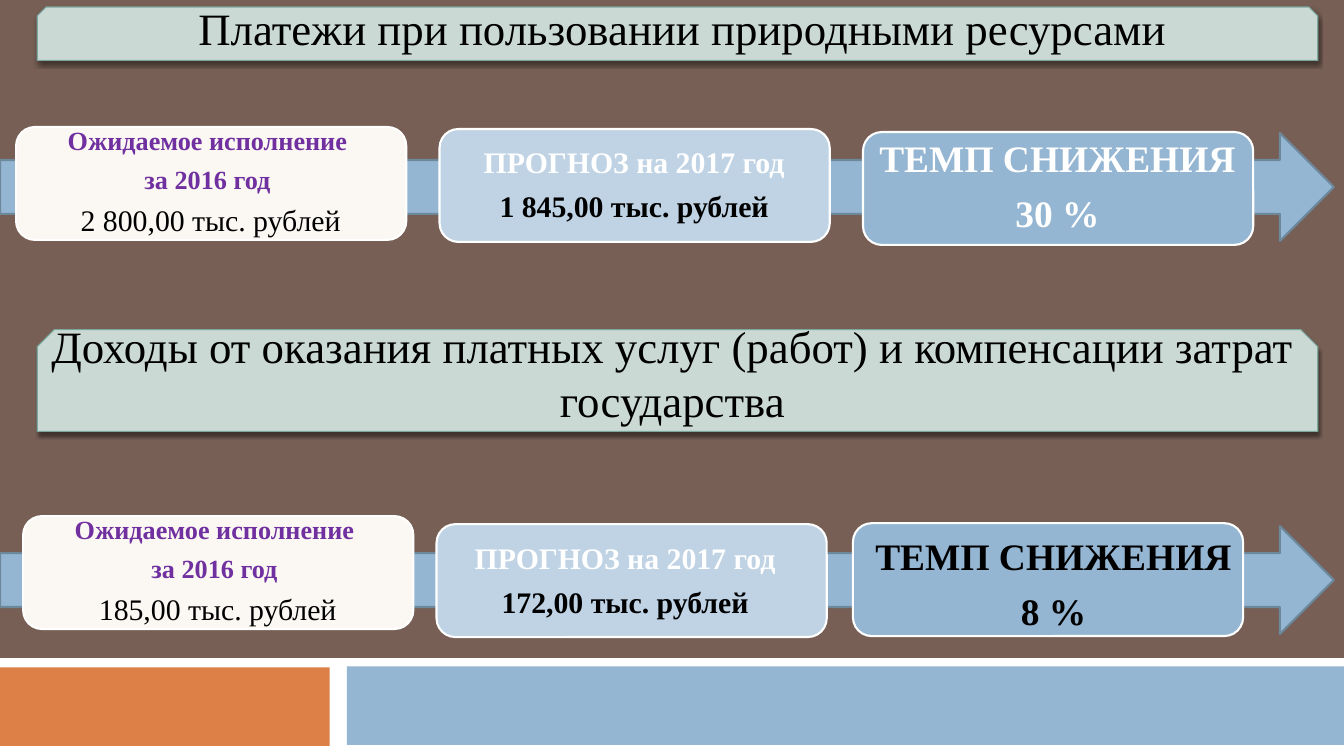
import pptx
import pptx.dml.color
import pptx.enum.shapes
import pptx.enum.text
import pptx.oxml
import pptx.oxml.ns
import pptx.util

Inches = pptx.util.Inches
Pt = pptx.util.Pt
SHAPES = pptx.enum.shapes.MSO_SHAPE
FONT = "Times New Roman"
COLOURS = {
    "brown": "775F55", "white": "FFFFFF", "black": "000000",
    "orange": "DD8047", "blue": "94B6D2", "blue_edge": "6D879B",
    "pale_blue": "BFD3E4", "cream": "FBF8F3", "purple": "7030A0",
    "sage": "CBD9D5", "sage_edge": "7BA79D",
}
CARD_SIZE = (3.87, 1.12)
LABEL_SIZE = (3.76, 1.01)


def colour(name):
    return pptx.dml.color.RGBColor.from_string(COLOURS[name])


def add_block(shapes, kind, place, fill, edge=None, width=1.5):
    """Add a filled preset shape, outlined only when an edge is given."""
    block = shapes.add_shape(kind, *map(Inches, place))
    block.shadow.inherit = False
    block.fill.solid()
    block.fill.fore_color.rgb = colour(fill)
    if edge:
        block.line.color.rgb = colour(edge)
        block.line.width = Pt(width)
    else:
        block.line.fill.background()
    return block


def add_drop_shadow(block):
    effects = block._element.spPr.find(pptx.oxml.ns.qn("a:effectLst"))
    effects.append(pptx.oxml.parse_xml(
        f'<a:outerShdw {pptx.oxml.ns.nsdecls("a")} blurRad="{Pt(3)}" dist="{Pt(2.4)}" '
        'dir="5400000" algn="ctr" rotWithShape="0">'
        f'<a:srgbClr val="{COLOURS["black"]}"><a:alpha val="45000"/></a:srgbClr>'
        '</a:outerShdw>'))


def add_span(para, text, size, shade, bold=False):
    para.alignment = pptx.enum.text.PP_ALIGN.CENTER
    span = para.add_run()
    span.text = text
    span.font.name = FONT
    span.font.size = Pt(size)
    span.font.bold = bold
    span.font.color.rgb = colour(shade)


def add_heading(page, plate, place, text):
    """Add a snipped plate with its heading over it."""
    add_drop_shadow(add_block(page.shapes, SHAPES.SNIP_2_SAME_RECTANGLE, plate,
                              "sage", "sage_edge", 0.79))
    box = page.shapes.add_textbox(*map(Inches, place))
    box.text_frame.word_wrap = True
    box.text_frame.auto_size = pptx.enum.text.MSO_AUTO_SIZE.SHAPE_TO_FIT_TEXT
    add_span(box.text_frame.paragraphs[0], text, 32, "black")


def add_card(page, corner, label_corner, fill, inset, lines):
    """Add a rounded card grouped with its centred label."""
    group = page.shapes.add_group_shape()
    add_block(group.shapes, SHAPES.ROUNDED_RECTANGLE, corner + CARD_SIZE, fill, "white")
    box = group.shapes.add_textbox(*map(Inches, label_corner + LABEL_SIZE))
    frame = box.text_frame
    frame.word_wrap = True
    frame.vertical_anchor = pptx.enum.text.MSO_ANCHOR.MIDDLE
    frame.margin_left = frame.margin_right = Inches(inset)
    frame.margin_top = frame.margin_bottom = Inches(inset)
    for index, (text, size, shade, bold) in enumerate(lines):
        para = frame.add_paragraph() if index else frame.paragraphs[0]
        para.line_spacing = 0.9
        para.space_after = Pt(round(size * 0.4, 1))
        add_span(para, text, size, shade, bold)


def add_expected(page, corner, label_corner, amount):
    add_card(page, corner, label_corner, "cream", 0.09, [
        ("Ожидаемое исполнение ", 18.7, "purple", True),
        ("за 2016 год ", 18.7, "purple", True),
        (amount, 21.3, "black", False)])


def add_forecast(page, corner, label_corner, amount):
    add_card(page, corner, label_corner, "pale_blue", 0.09, [
        ("ПРОГНОЗ на 2017 год", 21.3, "white", True),
        (amount, 21.3, "black", True)])


def add_decline(page, corner, label_corner, rate, shade):
    add_card(page, corner, label_corner, "blue", 0.11, [
        ("ТЕМП СНИЖЕНИЯ", 26.7, shade, True),
        (rate, 26.7, shade, True)])


def main():
    deck = pptx.Presentation()
    deck.slide_width, deck.slide_height = Inches(13.33), Inches(7.5)
    page = deck.slides.add_slide(deck.slide_layouts[6])
    page.background.fill.solid()
    page.background.fill.fore_color.rgb = colour("brown")

    # Footer bands
    for place, fill in (((0, 6.53, 13.33, 0.97), "white"),
                        ((-0.01, 6.62, 3.28, 0.78), "orange"),
                        ((3.44, 6.61, 9.89, 0.78), "blue")):
        add_block(page.shapes, SHAPES.RECTANGLE, place, fill)

    # Arrows behind the cards
    for top in (5.22, 1.32):
        add_block(page.shapes, SHAPES.RIGHT_ARROW, (0, top, 13.23, 1.07),
                  "blue", "blue_edge")

    # Headings
    add_heading(page, (0.37, 3.27, 12.7, 1.01), (0.37, 3.11, 12.6, 1.18),
                "Доходы от оказания платных услуг (работ) и компенсации затрат государства")
    add_heading(page, (0.37, 0.07, 12.7, 0.53), (0.47, -0.04, 12.6, 0.64),
                "Платежи при пользовании природными ресурсами")

    # Payments for natural resources
    add_expected(page, (0.16, 1.26), (0.21, 1.31), "2 800,00 тыс. рублей")
    add_forecast(page, (4.36, 1.28), (4.41, 1.34), "1 845,00 тыс. рублей")
    add_decline(page, (8.56, 1.31), (8.61, 1.36), "30 %", "white")

    # Income from paid services
    add_expected(page, (0.23, 5.12), (0.28, 5.17), "185,00 тыс. рублей")
    add_forecast(page, (4.33, 5.2), (4.32, 5.27), "172,00 тыс. рублей")
    add_decline(page, (8.46, 5.19), (8.57, 5.31), "8 %", "black")

    deck.save("out.pptx")


if __name__ == "__main__":
    main()
